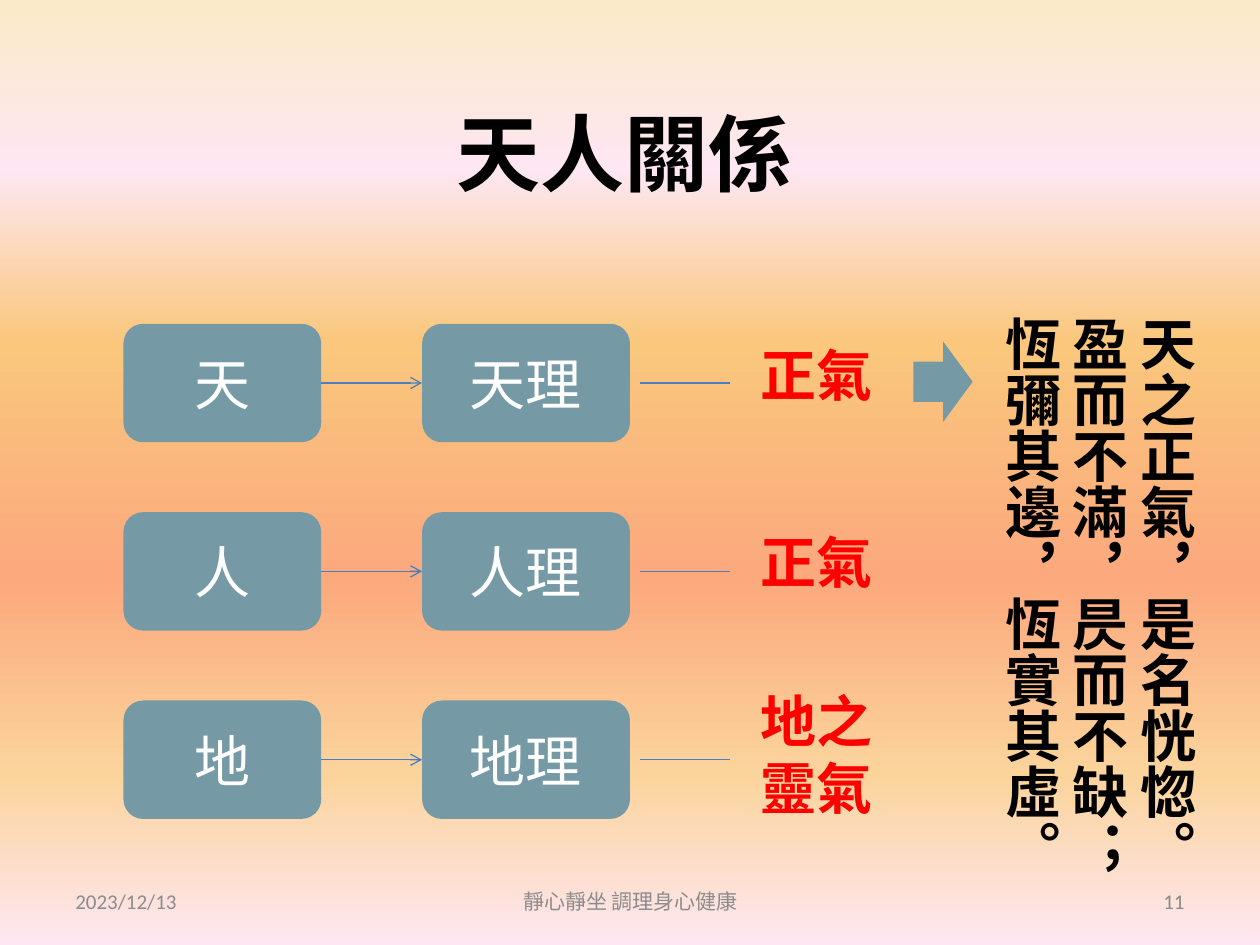
from lxml.etree import SubElement
from pptx import Presentation
from pptx.dml.color import RGBColor
from pptx.enum.shapes import MSO_CONNECTOR, MSO_SHAPE
from pptx.enum.text import MSO_ANCHOR, PP_ALIGN
from pptx.oxml.ns import qn
from pptx.util import Inches, Pt

TEAL = RGBColor(0x75, 0x9A, 0xA5)
BLUE = RGBColor(0x4B, 0x7E, 0xBC)
RED = RGBColor(0xFF, 0x00, 0x00)
BLACK = RGBColor(0x00, 0x00, 0x00)
WHITE = RGBColor(0xFF, 0xFF, 0xFF)
GRAY = RGBColor(0x8C, 0x8C, 0x8C)
NUMBER_GRAY = RGBColor(0x89, 0x89, 0x89)
CJK = "Noto Sans CJK JP"

SUNSET = [(0, "FBEAC7"), (18, "FEE7F2"), (36, "FAC77D"),
          (61, "FBA97D"), (82, "FBD49C"), (100, "FEE7F2")]
TITLE = "天人關係"
# realm, its principle, its energy, then the energy's top, width and height
ROWS = [("天", "天理", "正氣", 2.65, 1.26, 0.64),
        ("人", "人理", "正氣", 4.14, 1.26, 0.64),
        ("地", "地理", "地之靈氣", 5.4, 1.5, 1.18)]
VERSE = "天之正氣，是名恍惚。盈而不滿，昃而不缺；恆彌其邊，恆實其虛。"
FOOTERS = [("2023/12/13", 0.5, 2.33, PP_ALIGN.LEFT, GRAY),
           ("靜心靜坐 調理身心健康", 3.42, 3.17, PP_ALIGN.CENTER, GRAY),
           ("11", 7.17, 2.33, PP_ALIGN.RIGHT, NUMBER_GRAY)]

ROW_TOP, ROW_STEP, BOX_HEIGHT = 2.57, 1.495, 0.94
REALM_LEFT, REALM_WIDTH = 0.98, 1.57
PRINCIPLE_LEFT, PRINCIPLE_WIDTH = 3.35, 1.65
LINE_START, LINE_END = 5.08, 5.79
ENERGY_LEFT = 5.94

deck = Presentation()
deck.slide_width, deck.slide_height = Inches(10), Inches(7.5)
page = deck.slides.add_slide(deck.slide_layouts[6])


def paint_background(stops):
    """Fill the page with a gradient running from top to bottom."""
    page.background.fill.gradient()
    gradient = page._element.find(".//" + qn("a:gradFill"))
    stop_list = gradient.find(qn("a:gsLst"))
    for old in list(stop_list):
        stop_list.remove(old)
    for percent, color in stops:
        stop = SubElement(stop_list, qn("a:gs"), pos=str(percent * 1000))
        SubElement(stop, qn("a:srgbClr"), val=color)
    gradient.find(qn("a:lin")).set("ang", "5400000")


def write(shape, text, size=32, font=CJK, color=BLACK, bold=False,
          align=PP_ALIGN.LEFT, anchor=MSO_ANCHOR.TOP):
    frame = shape.text_frame
    frame.word_wrap = True
    frame.vertical_anchor = anchor
    para = frame.paragraphs[0]
    para.alignment = align
    span = para.add_run()
    span.text = text
    span.font.size, span.font.bold = Pt(size), bold
    span.font.name = font
    span.font.color.rgb = color
    SubElement(span._r.get_or_add_rPr(), qn("a:ea"), typeface=font)


def add_text(text, left, top, width, height, **style):
    box = page.shapes.add_textbox(*map(Inches, (left, top, width, height)))
    write(box, text, **style)
    return box


def add_teal(kind, left, top, width, height):
    shape = page.shapes.add_shape(kind, *map(Inches, (left, top, width, height)))
    shape.shadow.inherit = False
    shape.fill.solid()
    shape.fill.fore_color.rgb = TEAL
    shape.line.fill.background()
    return shape


def add_box(text, left, top, width):
    box = add_teal(MSO_SHAPE.ROUNDED_RECTANGLE, left, top, width, BOX_HEIGHT)
    write(box, text, color=WHITE, align=PP_ALIGN.CENTER, anchor=MSO_ANCHOR.MIDDLE)
    return box


def add_line(start, end, y):
    line = page.shapes.add_connector(
        MSO_CONNECTOR.STRAIGHT, Inches(start), Inches(y), Inches(end), Inches(y))
    line.line.color.rgb = BLUE
    line.line.width = Pt(0.75)
    SubElement(line._element.spPr, qn("a:effectLst"))
    return line


paint_background(SUNSET)
for text, left, width, align, color in FOOTERS:
    add_text(text, left, 6.95, width, 0.4, size=12, font="Calibri", color=color,
             align=align, anchor=MSO_ANCHOR.MIDDLE)
add_text(TITLE, 2.56, 0.76, 4.8, 0.95, size=48, bold=True, align=PP_ALIGN.CENTER)

for index, (realm, principle, energy, top, width, height) in enumerate(ROWS):
    row_top = ROW_TOP + index * ROW_STEP
    middle = row_top + BOX_HEIGHT / 2
    realm_box = add_box(realm, REALM_LEFT, row_top, REALM_WIDTH)
    principle_box = add_box(principle, PRINCIPLE_LEFT, row_top, PRINCIPLE_WIDTH)
    arrow = add_line(REALM_LEFT + REALM_WIDTH, PRINCIPLE_LEFT, middle)
    arrow.begin_connect(realm_box, 3)
    arrow.end_connect(principle_box, 1)
    SubElement(arrow.line._get_or_add_ln(), qn("a:tailEnd"), type="arrow")
    add_line(LINE_START, LINE_END, middle)
    add_text(energy, ENERGY_LEFT, top, width, height, color=RED, bold=True)

verse_box = add_text(VERSE, 7.75, 2.41, 1.82, 4.49, bold=True)
verse_box.text_frame._txBody.bodyPr.set("vert", "eaVert")
add_teal(MSO_SHAPE.RIGHT_ARROW, 7.25, 2.71, 0.47, 0.64)

deck.save("out.pptx")
